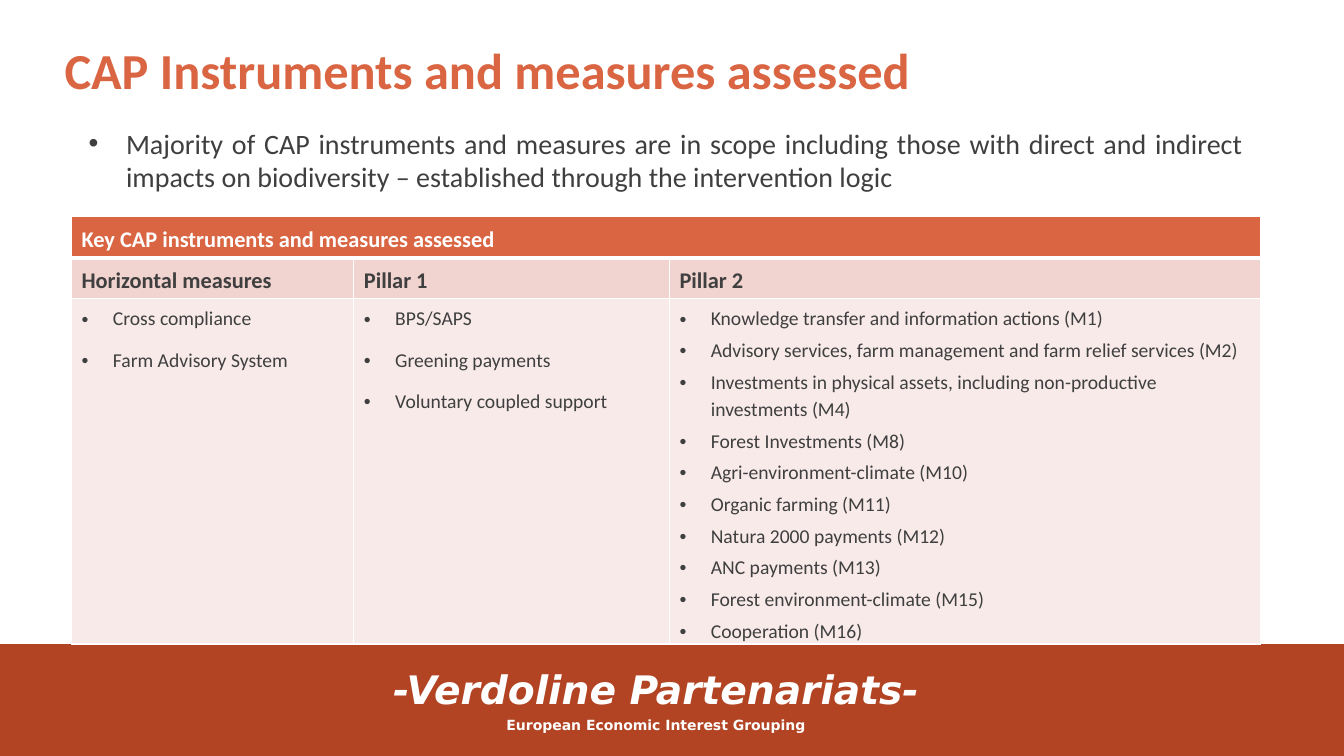
import pptx
import pptx.util
import pptx.dml.color
import pptx.enum.shapes
import pptx.enum.text
import pptx.oxml.ns
import lxml.etree

Inches = pptx.util.Inches
Pt = pptx.util.Pt
RGBColor = pptx.dml.color.RGBColor
ALIGN = pptx.enum.text.PP_ALIGN
ANCHOR = pptx.enum.text.MSO_ANCHOR
qn = pptx.oxml.ns.qn

WHITE = RGBColor(0xFF, 0xFF, 0xFF)
ORANGE = RGBColor(0xDA, 0x65, 0x42)
RUST = RGBColor(0xB2, 0x44, 0x23)
GREY = RGBColor(0x3F, 0x3F, 0x3F)
PINK = RGBColor(0xF1, 0xD3, 0xCF)
PALE_PINK = RGBColor(0xF8, 0xEA, 0xE9)


def add_run(paragraph, text, size, color, bold=False, italic=False, font="Calibri"):
    run = paragraph.add_run()
    run.text = text
    run.font.name = font
    run.font.size = Pt(size)
    run.font.bold = bold
    run.font.italic = italic
    run.font.color.rgb = color


def add_bullet(paragraph, indent):
    properties = paragraph._p.get_or_add_pPr()
    properties.set("marL", str(Inches(indent)))
    properties.set("indent", str(-Inches(indent)))
    lxml.etree.SubElement(properties, qn("a:buFont")).set("typeface", "Arial")
    lxml.etree.SubElement(properties, qn("a:buChar")).set("char", "•")


presentation = pptx.Presentation()
presentation.slide_width = Inches(13.33)
presentation.slide_height = Inches(7.5)
slide = presentation.slides.add_slide(presentation.slide_layouts[1])

# Title and body placeholders
title = slide.shapes.title
body = slide.placeholders[1]
for placeholder, (left, top, width, height) in (
    (title, (0.54, 0.34, 12, 1.25)),
    (body, (0.78, 1.2, 11.65, 0.8)),
):
    placeholder.left, placeholder.top = Inches(left), Inches(top)
    placeholder.width, placeholder.height = Inches(width), Inches(height)
    placeholder.text_frame.vertical_anchor = ANCHOR.TOP
    placeholder.text_frame.auto_size = pptx.enum.text.MSO_AUTO_SIZE.NONE

paragraph = title.text_frame.paragraphs[0]
paragraph.alignment = ALIGN.LEFT
add_run(paragraph, "CAP Instruments and measures assessed", 36, ORANGE, bold=True)

paragraph = body.text_frame.paragraphs[0]
paragraph.alignment = ALIGN.JUSTIFY
paragraph.space_before = Pt(4)
add_bullet(paragraph, 0.37)
add_run(
    paragraph,
    "Majority of CAP instruments and measures are in scope including those with direct "
    "and indirect impacts on biodiversity – established through the intervention logic",
    20,
    GREY,
)

# Footer band with the group name
band = slide.shapes.add_shape(
    pptx.enum.shapes.MSO_SHAPE.RECTANGLE, 0, Inches(6.39), Inches(13.33), Inches(1.11)
)
band.shadow.inherit = False
band.fill.solid()
band.fill.fore_color.rgb = RUST
band.line.fill.background()

footer = slide.shapes.add_textbox(Inches(-0.16), Inches(6.55), Inches(13.33), Inches(0.79))
footer.text_frame.word_wrap = True
name_line = footer.text_frame.paragraphs[0]
group_line = footer.text_frame.add_paragraph()
for paragraph, text, size, italic in (
    (name_line, "-Verdoline Partenariats-", 28, True),
    (group_line, "European Economic Interest Grouping", 10, False),
):
    paragraph.alignment = ALIGN.CENTER
    paragraph.space_before = Pt(3)
    add_run(paragraph, text, size, WHITE, bold=True, italic=italic, font="DejaVu Sans")

# Table of instruments: heading, width, space after each item, items
TABLE_TITLE = "Key CAP instruments and measures assessed"
COLUMNS = [
    ("Horizontal measures", 2.8, 10, ["Cross compliance", "Farm Advisory System"]),
    ("Pillar 1", 3.13, 10, ["BPS/SAPS", "Greening payments", "Voluntary coupled support"]),
    ("Pillar 2", 5.86, 3, [
        "Knowledge transfer and information actions (M1)",
        "Advisory services, farm management and farm relief services (M2)",
        "Investments in physical assets, including non-productive investments (M4)",
        "Forest Investments (M8)",
        "Agri-environment-climate (M10)",
        "Organic farming (M11)",
        "Natura 2000 payments (M12)",
        "ANC payments (M13)",
        "Forest environment-climate (M15)",
        "Cooperation (M16)",
    ]),
]
ROW_HEIGHTS = [0.3, 0.3, 3.22]
ROW_FILLS = [ORANGE, PINK, PALE_PINK]

table = slide.shapes.add_table(
    3, 3, Inches(0.71), Inches(2.15), Inches(11.79), Inches(sum(ROW_HEIGHTS))
).table
for row, height in zip(table.rows, ROW_HEIGHTS):
    row.height = Inches(height)

# White borders, thicker below the title row and above the headings
for row_index, fill in enumerate(ROW_FILLS):
    for column_index in range(3):
        cell = table.cell(row_index, column_index)
        cell_properties = cell._tc.get_or_add_tcPr()
        for side in ("L", "R", "T", "B"):
            thick = (row_index, side) in ((0, "B"), (1, "T"))
            border = lxml.etree.SubElement(cell_properties, qn("a:ln" + side))
            border.set("w", str(Pt(3 if thick else 1)))
            border_fill = lxml.etree.SubElement(border, qn("a:solidFill"))
            lxml.etree.SubElement(border_fill, qn("a:srgbClr")).set("val", str(WHITE))
        cell.fill.solid()
        cell.fill.fore_color.rgb = fill

# Title row and column contents
table.cell(0, 0).merge(table.cell(0, 2))
entries = [(0, 0, TABLE_TITLE, WHITE, 10)]
for column_index, (heading, width, item_gap, items) in enumerate(COLUMNS):
    table.columns[column_index].width = Inches(width)
    entries.append((1, column_index, heading, GREY, 10))
    entries += [(2, column_index, item, GREY, item_gap) for item in items]

for row_index, column_index, text, color, space_after in entries:
    text_frame = table.cell(row_index, column_index).text_frame
    paragraph = text_frame.paragraphs[0]
    if paragraph.runs:
        paragraph = text_frame.add_paragraph()
    paragraph.line_spacing = 1.15
    paragraph.space_after = Pt(space_after)
    is_item = row_index == 2
    if is_item:
        add_bullet(paragraph, 0.31)
    add_run(paragraph, text, 14 if is_item else 16, color, bold=not is_item)

presentation.save("out.pptx")
